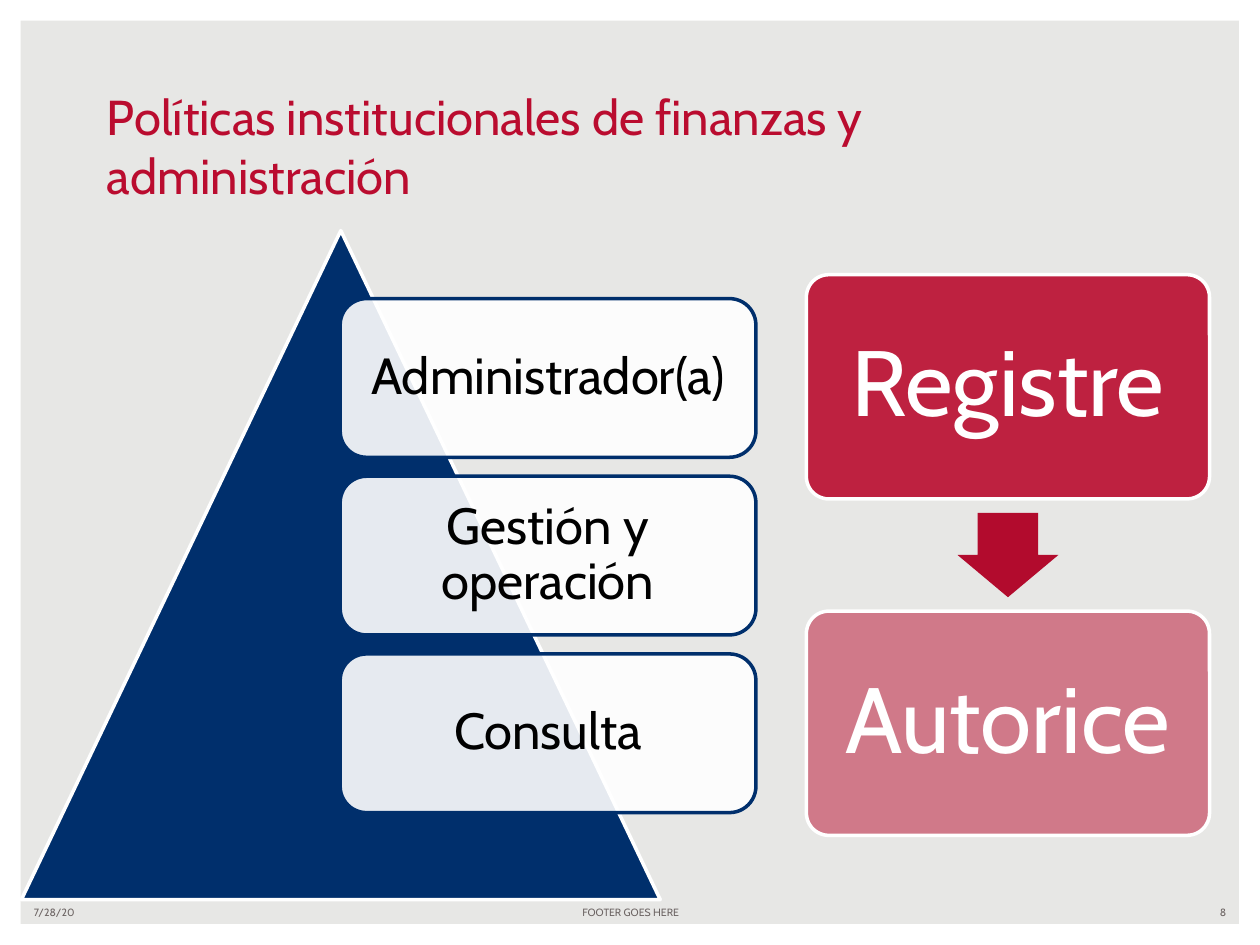
from lxml import etree
from pptx import Presentation
from pptx.dml.color import RGBColor
from pptx.enum.shapes import MSO_SHAPE
from pptx.enum.text import MSO_ANCHOR, PP_ALIGN
from pptx.oxml.ns import qn
from pptx.util import Inches, Pt

LEFT, CENTER, RIGHT = PP_ALIGN.LEFT, PP_ALIGN.CENTER, PP_ALIGN.RIGHT
MIDDLE, BOTTOM = MSO_ANCHOR.MIDDLE, MSO_ANCHOR.BOTTOM
FRAME, TRIANGLE = MSO_SHAPE.FRAME, MSO_SHAPE.ISOSCELES_TRIANGLE
ROUNDED, DOWN_ARROW = MSO_SHAPE.ROUNDED_RECTANGLE, MSO_SHAPE.DOWN_ARROW

FONT = "Cabin"
COLORS = {
    "background": "E7E7E5", "white": "FFFFFF", "black": "000000",
    "navy": "002F6C", "red": "BA0C2F", "arrow": "B20B2D", "footer": "6C6463",
}

TITLE = "Políticas institucionales de finanzas y administración"
ROLES = ["Administrador(a)", "Gestión y operación", "Consulta"]
STEPS = [("Registre", 90), ("Autorice", 50)]  # text, fill opacity in percent
FOOTERS = [  # text, left, width, alignment
    ("7/28/20", 0.17, 2.33, LEFT),
    ("FOOTER GOES HERE", 3.42, 3.17, CENTER),
    ("8", 7.5, 2.33, RIGHT),
]

ROLE_TOP, ROLE_PITCH = 2.37, 1.41
STEP_TOP, STEP_PITCH = 2.18, 2.67


def rgb(name):
    return RGBColor.from_string(COLORS[name])


def add_shape(slide, kind, box, fill, line=None, opacity=100, adjust=()):
    sp = slide.shapes.add_shape(kind, *map(Inches, box))
    sp.shadow.inherit = False
    for i, value in enumerate(adjust):
        sp.adjustments[i] = value
    sp.fill.solid()
    sp.fill.fore_color.rgb = rgb(fill)
    if opacity < 100:
        color = sp._element.spPr.find(qn("a:solidFill"))[0]
        etree.SubElement(color, qn("a:alpha")).set("val", str(opacity * 1000))
    if line:
        sp.line.color.rgb = rgb(line)
        sp.line.width = Pt(2)
    else:
        sp.line.fill.background()
    return sp


def set_text(sp, text, size, color, align=CENTER, anchor=MIDDLE):
    tf = sp.text_frame
    tf.word_wrap = True
    tf.vertical_anchor = anchor
    p = tf.paragraphs[0]
    p.text = text
    p.alignment = align
    p.font.name = FONT
    p.font.size = Pt(size)
    p.font.color.rgb = rgb(color)


def add_label(slide, box, *args):
    set_text(slide.shapes.add_textbox(*map(Inches, box)), *args)


def set_card_text(sp, text, size, color, inset):
    set_text(sp, text, size, color)
    tf = sp.text_frame
    tf.margin_left = tf.margin_right = Inches(inset)
    tf.margin_top = tf.margin_bottom = Inches(inset)
    tf.paragraphs[0].line_spacing = 0.9


def main():
    prs = Presentation()
    prs.slide_width, prs.slide_height = Inches(10), Inches(7.5)
    slide = prs.slides.add_slide(prs.slide_layouts[6])
    slide.background.fill.solid()
    slide.background.fill.fore_color.rgb = rgb("background")

    add_shape(slide, FRAME, (0, 0, 10, 7.5), "white", adjust=[0.022])
    for text, left, width, align in FOOTERS:
        add_label(slide, (left, 7.14, width, 0.2), text, 6, "footer", align)
    add_label(slide, (0.75, 1.1, 8.5, 0.57), TITLE, 28, "red", LEFT, BOTTOM)

    add_shape(slide, TRIANGLE, (0.17, 1.83, 5.07, 5.31), "navy", "white")
    for i, role in enumerate(ROLES):
        box = (2.7, ROLE_TOP + i * ROLE_PITCH, 3.3, 1.26)
        card = add_shape(slide, ROUNDED, box, "white", "navy", 90)
        set_card_text(card, role, 29, "black", 0.12)

    for i, (step, opacity) in enumerate(STEPS):
        box = (6.4, STEP_TOP + i * STEP_PITCH, 3.2, 1.78)
        card = add_shape(slide, ROUNDED, box, "red", "white", opacity, [0.1])
        set_card_text(card, step, 53, "white", 0.22)
    add_shape(slide, DOWN_ARROW, (7.6, 4.07, 0.8, 0.67), "arrow", adjust=[0.6, 0.5])

    prs.save("out.pptx")


if __name__ == "__main__":
    main()
